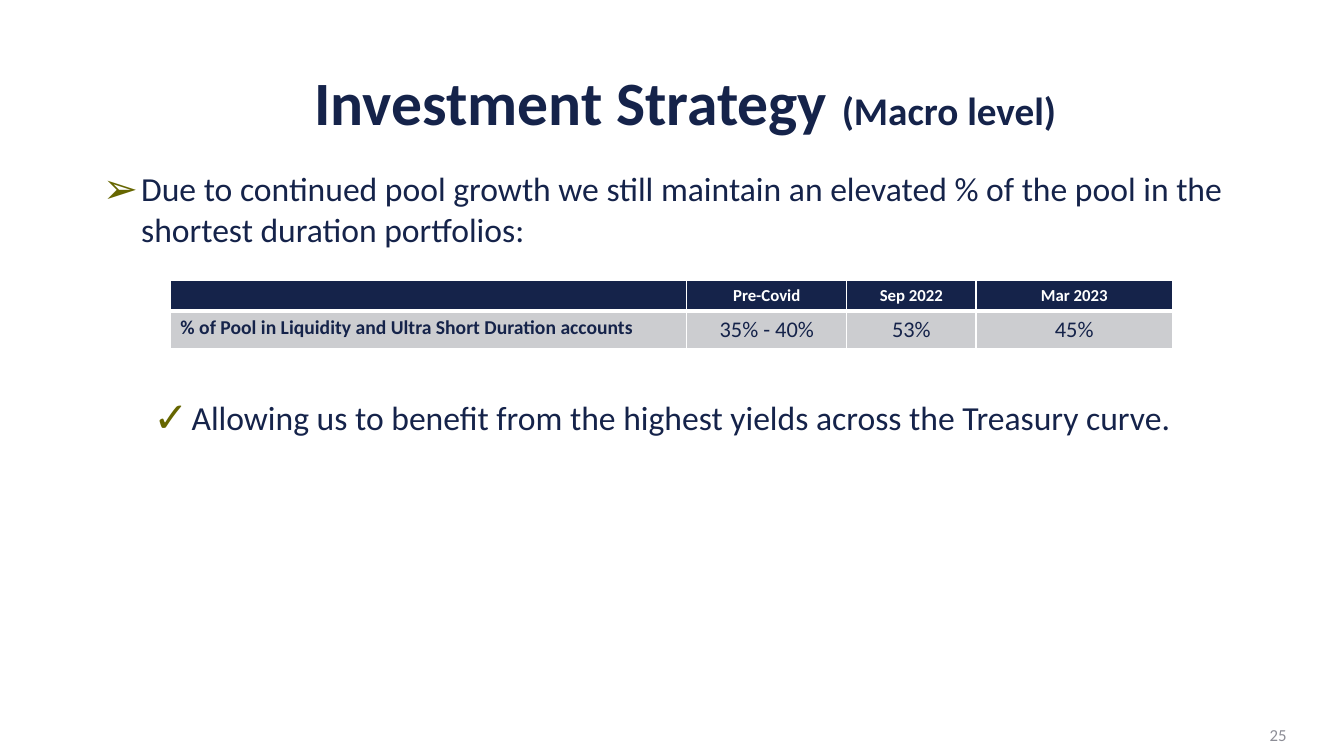
from pptx import Presentation
from pptx.dml.color import RGBColor
from pptx.enum.text import MSO_ANCHOR, MSO_AUTO_SIZE, PP_ALIGN
from pptx.oxml.xmlchemy import OxmlElement
from pptx.util import Inches, Pt

NAVY, OLIVE, GREY, SILVER, WHITE = "15234A", "666600", "8C8D96", "CCCDD0", "FFFFFF"


def color(value):
    return RGBColor.from_string(value)


def add_element(parent, tag, **attributes):
    element = OxmlElement(tag)
    for name, value in attributes.items():
        element.set(name, str(value))
    parent.append(element)
    return element


class SlideBuilder:
    font_name = "Calibri"

    def __init__(self, presentation):
        self.slide = presentation.slides.add_slide(presentation.slide_layouts[1])

    def style(self, font, size, fill=NAVY, bold=False):
        font.name, font.size, font.bold = self.font_name, Pt(size), bold
        font.color.rgb = color(fill)

    def place(self, shape, left, top, width, height, anchor):
        shape.left, shape.top = Inches(left), Inches(top)
        shape.width, shape.height = Inches(width), Inches(height)
        frame = shape.text_frame
        frame.word_wrap = True
        frame.auto_size = MSO_AUTO_SIZE.NONE
        frame.vertical_anchor = anchor
        return frame

    def title(self, box, parts):
        frame = self.place(self.slide.shapes.title, *box, MSO_ANCHOR.MIDDLE)
        paragraph = frame.paragraphs[0]
        paragraph.alignment = PP_ALIGN.CENTER
        paragraph.line_spacing = 0.9
        for text, size in parts:
            run = paragraph.add_run()
            run.text = text
            self.style(run.font, size, bold=True)

    def bullets(self, box, items):
        """Fill the body with (text, bullet, level, left margin, space before)."""
        frame = self.place(self.slide.placeholders[1], *box, MSO_ANCHOR.TOP)
        for index, (text, bullet, level, margin, space) in enumerate(items):
            paragraph = frame.add_paragraph() if index else frame.paragraphs[0]
            paragraph.text = text
            paragraph.level = level
            properties = paragraph._p.get_or_add_pPr()
            properties.set("marL", str(Inches(margin)))
            properties.set("indent", str(Inches(-0.38)))
            bullet_color = add_element(properties, "a:buClr")
            add_element(bullet_color, "a:srgbClr", val=OLIVE)
            add_element(properties, "a:buSzPct", val=125000)
            add_element(properties, "a:buChar", char=bullet)
            paragraph.space_before = Pt(space)
            self.style(paragraph.font, 24)

    def page_number(self, box, text):
        shape = self.slide.shapes.add_textbox(*map(Inches, box))
        paragraph = self.place(shape, *box, MSO_ANCHOR.MIDDLE).paragraphs[0]
        paragraph.text = text
        paragraph.alignment = PP_ALIGN.RIGHT
        self.style(paragraph.font, 12, GREY)

    def cell(self, cell, text, size, ink, bold, fill, bottom):
        properties = cell._tc.get_or_add_tcPr()
        for side, width in (("L", 1), ("R", 1), ("T", 1), ("B", bottom)):
            line = add_element(properties, f"a:ln{side}", w=Pt(width))
            add_element(add_element(line, "a:solidFill"), "a:srgbClr", val=WHITE)
        cell.fill.solid()
        cell.fill.fore_color.rgb = color(fill)
        paragraph = cell.text_frame.paragraphs[0]
        if text:
            paragraph.text = text
            self.style(paragraph.font, size, ink, bold)
        else:
            add_element(paragraph._p, "a:endParaRPr", sz=size * 100)
        return paragraph

    def table(self, box, widths, heights, rows):
        shape = self.slide.shapes.add_table(len(rows), len(widths), *map(Inches, box))
        table = shape.table
        table.horz_banding = False
        for column, width in zip(table.columns, widths):
            column.width = Inches(width)
        for row, height in zip(table.rows, heights):
            row.height = Inches(height)
        for row_index, row in enumerate(rows):
            for column_index, text in enumerate(row):
                if row_index == 0:
                    look = (12, WHITE, True, NAVY, 3)
                elif column_index == 0:
                    look = (14, NAVY, True, SILVER, 1)
                else:
                    look = (16, NAVY, False, SILVER, 1)
                paragraph = self.cell(table.cell(row_index, column_index), text, *look)
                if column_index:
                    paragraph.alignment = PP_ALIGN.CENTER


def main():
    presentation = Presentation()
    presentation.slide_width, presentation.slide_height = Inches(13.33), Inches(7.5)
    builder = SlideBuilder(presentation)
    builder.title((1.46, 0.67, 10.67, 0.75),
                  [("Investment Strategy ", 44), ("(Macro level)", 28)])
    builder.page_number((9.86, 7.09, 3, 0.4), "25")
    builder.bullets((0.92, 1.62, 11.75, 3.82), [
        ("Due to continued pool growth we still maintain an elevated % of the pool "
         "in the shortest duration portfolios:", "➢", 0, 0.38, 0),
        ("Allowing us to benefit from the highest yields across the Treasury curve.",
         "✓", 1, 0.88, 106),
    ])
    builder.table((1.69, 2.78, 9.94, 0.67), [5.12, 1.59, 1.28, 1.95], [0.3, 0.37], [
        ["", "Pre-Covid", "Sep 2022", "Mar 2023"],
        ["% of Pool in Liquidity and Ultra Short Duration accounts",
         "35% - 40%", "53%", "45%"],
    ])
    presentation.save("out.pptx")


if __name__ == "__main__":
    main()
